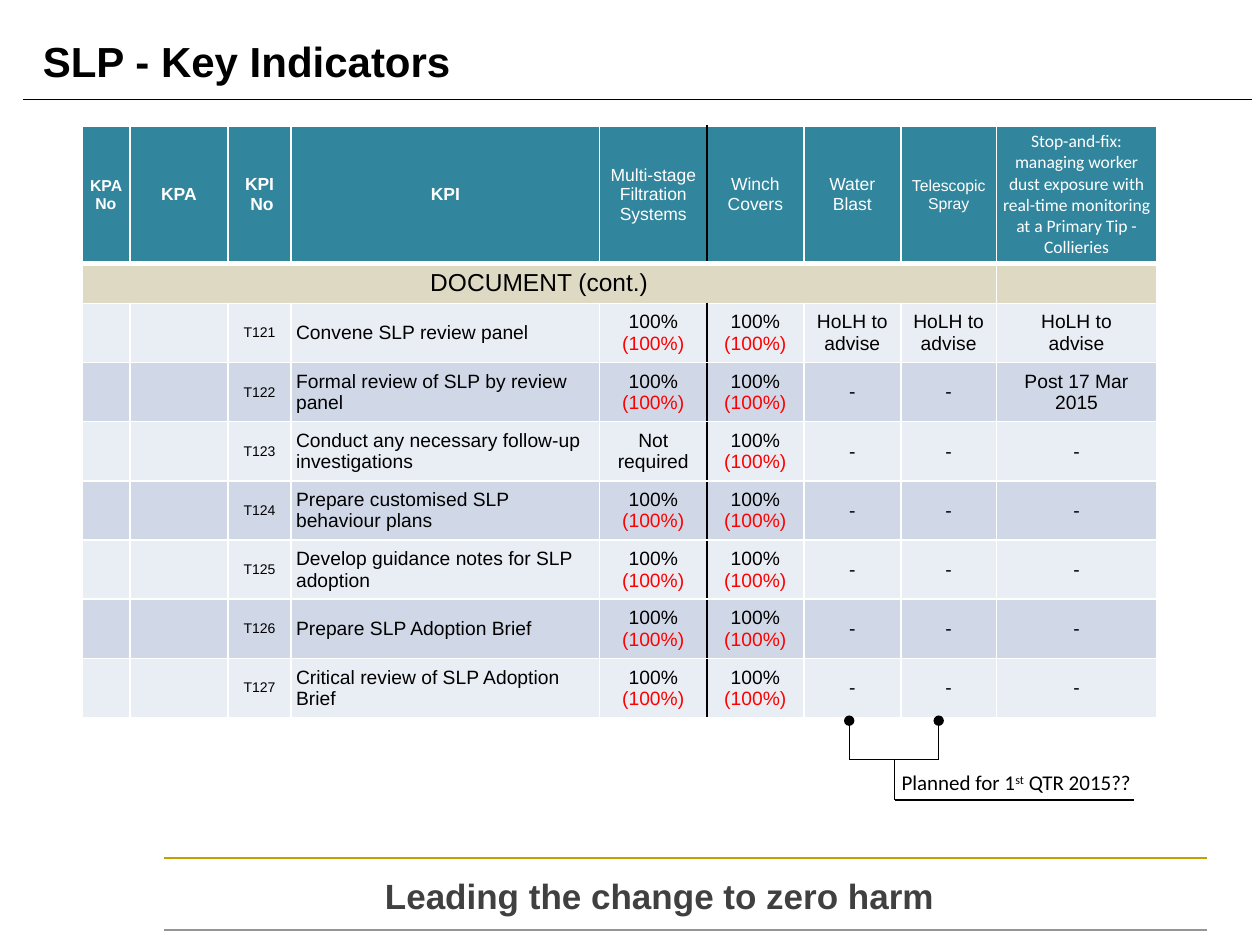
import pptx
import pptx.dml.color
import pptx.enum.shapes
import pptx.enum.text
import pptx.oxml.ns
import pptx.util
import lxml.etree

Inches = pptx.util.Inches
ALIGN = pptx.enum.text.PP_ALIGN
MIDDLE = pptx.enum.text.MSO_ANCHOR.MIDDLE

BLACK, WHITE, RED, GOLD, GREY = "000000", "FFFFFF", "FF0000", "C49F00", "969696"
HEADER_FILL, SECTION_FILL = "31859C", "DDD9C3"
BAND_FILLS = ["E9EDF4", "D0D8E8"]

COLUMN_WIDTHS = [0.38, 0.78, 0.5, 2.45, 0.85, 0.77, 0.77, 0.76, 1.27]
HEADER_HEIGHT, SECTION_HEIGHT, ROW_HEIGHT = 1.08, 0.3, 0.47
DIVIDER_COLUMN = 4

HEADERS = [
    ("KPA No", 9, True, "Arial"),
    ("KPA", 10, True, "Arial"),
    ("KPI\n No", 10, True, "Arial"),
    ("KPI", 10, True, "Arial"),
    ("Multi-stage Filtration Systems", 10, False, "Arial"),
    ("Winch Covers", 10, False, "Arial"),
    ("Water Blast", 10, False, "Arial"),
    ("Telescopic Spray", 9, False, "Arial"),
    ("Stop-and-fix: managing worker dust exposure with real-time monitoring "
     "at a Primary Tip - Collieries", 10, False, "Calibri"),
]
DONE = "100%\n(100%)"
ADVISE = "HoLH to advise"
INDICATORS = [
    ("T121", "Convene SLP review panel", DONE, DONE, ADVISE, ADVISE, "HoLH to\nadvise"),
    ("T122", "Formal review of SLP by review panel", DONE, DONE, "-", "-", "Post 17 Mar 2015"),
    ("T123", "Conduct any necessary follow-up investigations", "Not required", DONE, "-", "-", "-"),
    ("T124", "Prepare customised SLP behaviour plans", DONE, DONE, "-", "-", "-"),
    ("T125", "Develop guidance notes for SLP adoption", DONE, DONE, "-", "-", "-"),
    ("T126", "Prepare SLP Adoption Brief", DONE, DONE, "-", "-", "-"),
    ("T127", "Critical review of SLP Adoption Brief", DONE, DONE, "-", "-", "-"),
]
LINES = [
    ((0.18, 0.79), (9.94, 0.79), BLACK, 0.75, False),
    ((6.74, 5.72), (6.74, 6.03), BLACK, 0.75, True),
    ((7.45, 5.72), (7.45, 6.03), BLACK, 0.75, True),
    ((6.74, 6.03), (7.45, 6.03), BLACK, 0.75, False),
    ((7.1, 6.03), (7.1, 6.35), BLACK, 0.75, False),
    ((7.1, 6.35), (9, 6.35), BLACK, 0.75, False),
    ((1.3, 6.81), (9.58, 6.81), GOLD, 1, False),
    ((1.3, 7.38), (9.58, 7.38), GREY, 0.75, False),
]


def rgb(value):
    return pptx.dml.color.RGBColor.from_string(value)


def add_run(paragraph, text, size, font="Arial", color=BLACK, bold=False, baseline=None):
    run = paragraph.add_run()
    run.text = text
    run.font.size = pptx.util.Pt(size)
    run.font.name = font
    run.font.bold = bold
    run.font.color.rgb = rgb(color)
    if baseline:
        run._r.get_or_add_rPr().set("baseline", str(baseline))


def write(frame, text, size, align=ALIGN.CENTER, **style):
    for index, line in enumerate(text.split("\n")):
        paragraph = frame.paragraphs[0] if index == 0 else frame.add_paragraph()
        paragraph.alignment = align
        if line:
            line_style = {**style, "color": RED} if line == "(100%)" else style
            add_run(paragraph, line, size, **line_style)
        else:
            paragraph._p.get_or_add_endParaRPr().set("sz", str(size * 100))


def set_border(cell, side, color, width):
    properties = cell._tc.get_or_add_tcPr()
    tag = pptx.oxml.ns.qn
    line = lxml.etree.SubElement(properties, tag(f"a:ln{side}"), w=str(pptx.util.Pt(width)))
    fill = lxml.etree.SubElement(line, tag("a:solidFill"))
    lxml.etree.SubElement(fill, tag("a:srgbClr"), val=color)


def format_cell(cell, fill, left=WHITE, right=WHITE, top_width=1, bottom_width=1):
    set_border(cell, "L", left, 1)
    set_border(cell, "R", right, 1)
    set_border(cell, "T", WHITE, top_width)
    set_border(cell, "B", WHITE, bottom_width)
    cell.fill.solid()
    cell.fill.fore_color.rgb = rgb(fill)
    cell.vertical_anchor = MIDDLE
    cell.margin_left = cell.margin_right = Inches(0.04)
    cell.margin_top = cell.margin_bottom = Inches(0.04)


def add_indicator_table(slide):
    heights = [HEADER_HEIGHT, SECTION_HEIGHT] + [ROW_HEIGHT] * len(INDICATORS)
    table = slide.shapes.add_table(
        len(heights), len(COLUMN_WIDTHS), Inches(0.65), Inches(1),
        Inches(sum(COLUMN_WIDTHS)), Inches(sum(heights))).table
    for column, width in zip(table.columns, COLUMN_WIDTHS):
        column.width = Inches(width)
    for row, height in zip(table.rows, heights):
        row.height = Inches(height)

    for row in range(len(heights)):
        for column in range(len(COLUMN_WIDTHS)):
            cell = table.cell(row, column)
            divided = row != 1
            left = BLACK if divided and column == DIVIDER_COLUMN + 1 else WHITE
            right = BLACK if divided and column == DIVIDER_COLUMN else WHITE
            fill = [HEADER_FILL, SECTION_FILL][row] if row < 2 else BAND_FILLS[row % 2]
            format_cell(cell, fill, left, right,
                        3 if row == 1 else 1, 3 if row == 0 else 1)
            if row == 0:
                text, size, bold, font = HEADERS[column]
                write(cell.text_frame, text, size, bold=bold, font=font, color=WHITE)
            elif row == 1:
                write(cell.text_frame, "DOCUMENT (cont.)" if column == 0 else "", 14)
            else:
                text = ("", "", *INDICATORS[row - 2])[column]
                write(cell.text_frame, text, 8 if column == 2 else 11,
                      ALIGN.LEFT if column == 3 else ALIGN.CENTER)
    table.cell(1, 0).merge(table.cell(1, len(COLUMN_WIDTHS) - 2))


def add_line(slide, start, end, color, width, dot):
    connector = slide.shapes.add_connector(
        pptx.enum.shapes.MSO_CONNECTOR.STRAIGHT, *map(Inches, start + end))
    connector.line.color.rgb = rgb(color)
    connector.line.width = pptx.util.Pt(width)
    if dot:
        lxml.etree.SubElement(connector.line._get_or_add_ln(),
                              pptx.oxml.ns.qn("a:headEnd"), type="oval")
    lxml.etree.SubElement(connector._element.spPr, pptx.oxml.ns.qn("a:effectLst"))


def add_text_box(slide, left, top, width, height, wrap=True):
    frame = slide.shapes.add_textbox(*map(Inches, (left, top, width, height))).text_frame
    frame.word_wrap = wrap
    return frame


def main():
    presentation = pptx.Presentation()
    presentation.slide_width, presentation.slide_height = Inches(10), Inches(7.5)
    slide = presentation.slides.add_slide(presentation.slide_layouts[5])

    title = slide.shapes.title
    title.left, title.top, title.width, title.height = map(Inches, (0.24, 0.17, 9.84, 0.63))
    title.text_frame.vertical_anchor = MIDDLE
    write(title.text_frame, "SLP - Key Indicators", 24, ALIGN.LEFT, bold=True)

    add_indicator_table(slide)
    for line in LINES:
        add_line(slide, *line)

    plan = add_text_box(slide, 7.04, 6.06, 2.05, 0.3, wrap=False)
    write(plan, "Planned for 1", 12, font="Calibri")
    add_run(plan.paragraphs[0], "st", 12, font="Calibri", baseline=30000)
    add_run(plan.paragraphs[0], " QTR 2015??", 12, font="Calibri")

    slogan = add_text_box(slide, 1.64, 6.89, 7.19, 0.39)
    write(slogan, "Leading the change to zero harm", 20, bold=True, color="404040")

    presentation.save("out.pptx")


if __name__ == "__main__":
    main()
